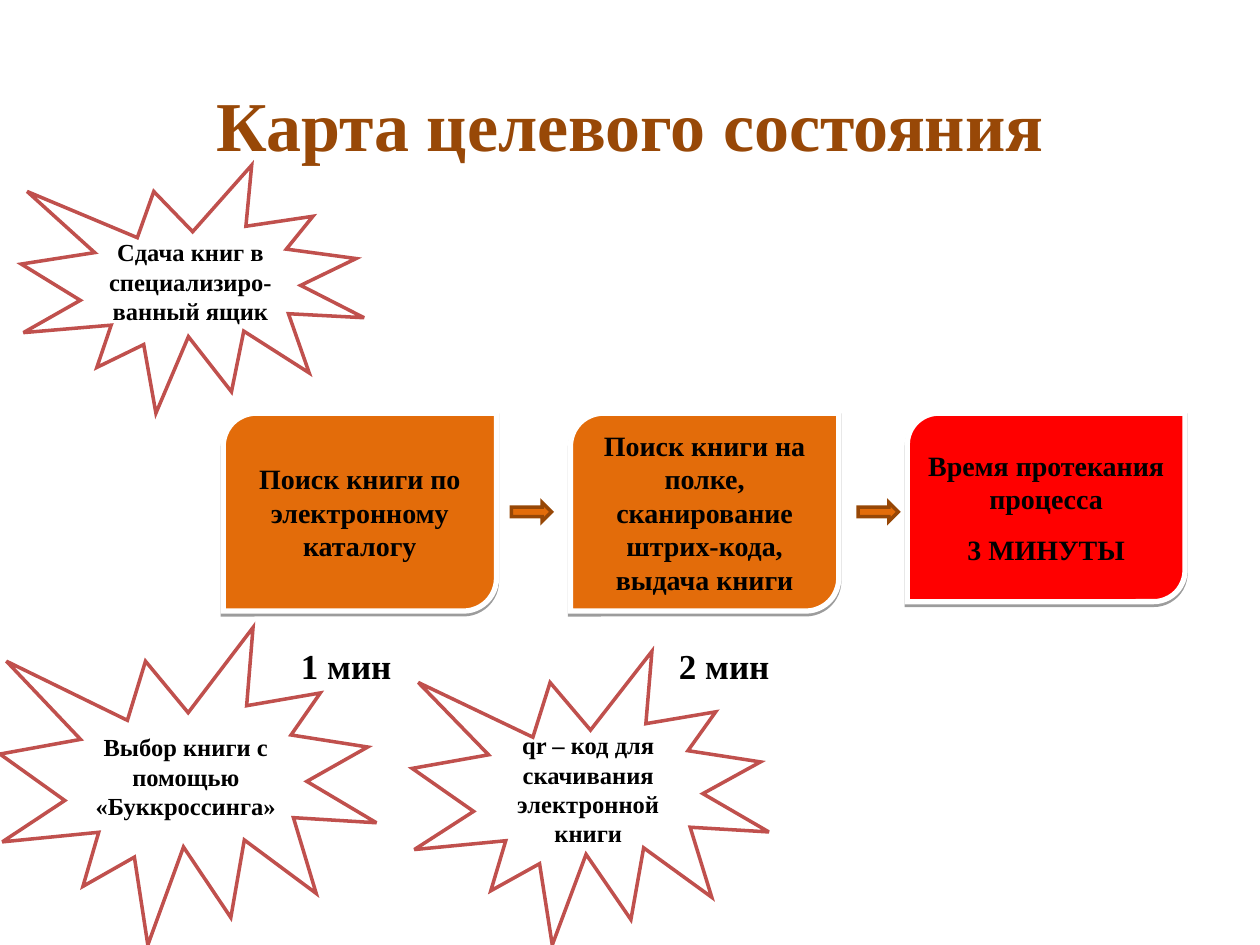
"""Build the target state map slide of a library process."""
import pptx
import pptx.dml.color
import pptx.enum.shapes
import pptx.enum.text
import pptx.oxml
import pptx.oxml.ns
import pptx.util

Cm = pptx.util.Cm
Pt = pptx.util.Pt
SHAPES = pptx.enum.shapes.MSO_SHAPE
ORANGE = "E36C0A"
NAMESPACE = pptx.oxml.ns.nsdecls("a")


def color(hex_code):
    return pptx.dml.color.RGBColor.from_string(hex_code)


def write(shape, lines, size, text_color="000000", inset=0.1):
    frame = shape.text_frame
    frame.word_wrap = True
    frame.vertical_anchor = pptx.enum.text.MSO_ANCHOR.MIDDLE
    frame.margin_left = frame.margin_right = Cm(inset)
    frame.margin_top = frame.margin_bottom = Cm(inset)
    for number, line in enumerate(lines):
        paragraph = frame.add_paragraph() if number else frame.paragraphs[0]
        paragraph.text = line
        paragraph.alignment = pptx.enum.text.PP_ALIGN.CENTER
        if number:
            paragraph.space_before = Pt(10)
        paragraph.font.name = "Times New Roman"
        paragraph.font.size = Pt(size)
        paragraph.font.bold = True
        paragraph.font.color.rgb = color(text_color)


def add_label(slide, left, top, width, height, text, size, text_color="000000"):
    label = slide.shapes.add_textbox(Cm(left), Cm(top), Cm(width), Cm(height))
    write(label, [text], size, text_color)


def add_figure(slide, preset, left, top, width, height, fill, line, line_width):
    figure = slide.shapes.add_shape(preset, Cm(left), Cm(top), Cm(width), Cm(height))
    figure.shadow.inherit = False
    figure.fill.solid()
    figure.fill.fore_color.rgb = color(fill)
    figure.line.color.rgb = color(line)
    figure.line.width = Pt(line_width)
    outline = figure._element.spPr.find(pptx.oxml.ns.qn("a:ln"))
    outline.append(pptx.oxml.parse_xml(f'<a:miter {NAMESPACE} lim="800000"/>'))
    return figure


def add_step(slide, left, width, height, fill, lines):
    step = add_figure(slide, SHAPES.ROUND_2_DIAG_RECTANGLE,
                      left, 8.33, width, height, fill, "FFFFFF", 3)
    effects = step._element.spPr.find(pptx.oxml.ns.qn("a:effectLst"))
    effects.append(pptx.oxml.parse_xml(
        f'<a:outerShdw {NAMESPACE} blurRad="0" dist="20320" dir="5400000" rotWithShape="0">'
        '<a:srgbClr val="000000"><a:alpha val="38000"/></a:srgbClr></a:outerShdw>'))
    write(step, lines, 16)


def add_arrow(slide, left):
    add_figure(slide, SHAPES.RIGHT_ARROW, left, 10.13, 0.81, 0.38, ORANGE, "974706", 2)


def add_burst(slide, left, top, width, height, idea):
    burst = add_figure(slide, SHAPES.EXPLOSION1, left, top, width, height,
                       "FFFFFF", "C0504D", 2)
    write(burst, [idea], 14)


def main():
    presentation = pptx.Presentation()
    presentation.slide_width, presentation.slide_height = Cm(25.4), Cm(19.05)
    slide = presentation.slides.add_slide(presentation.slide_layouts[6])

    add_label(slide, 1.27, 0.9, 22.86, 3.18, "Карта целевого состояния", 40, "984807")

    steps = [
        (4.5, 5.51, 3.99, ORANGE, ["Поиск книги по электронному каталогу"]),
        (11.5, 5.41, 3.99, ORANGE,
         ["Поиск книги на полке, сканирование штрих-кода, выдача книги"]),
        (18.29, 5.6, 3.8, "FF0000", ["Время протекания процесса", "3 МИНУТЫ"]),
    ]
    for step in steps:
        add_step(slide, *step)
    for left in (10.31, 17.3):
        add_arrow(slide, left)
    for left, duration in ((5.48, "1 мин"), (13.1, "2 мин")):
        add_label(slide, left, 12.85, 3, 1.12, duration, 20)

    bursts = [
        (0.43, 3.33, 6.91, 5, "Сдача книг в специализиро-ванный ящик"),
        (8.31, 13.13, 7.19, 5.92, "qr – код для скачивания электронной книги"),
        (0, 12.65, 7.59, 6.4, "Выбор книги с помощью «Буккроссинга»"),
    ]
    for burst in bursts:
        add_burst(slide, *burst)

    presentation.save("out.pptx")


if __name__ == "__main__":
    main()
